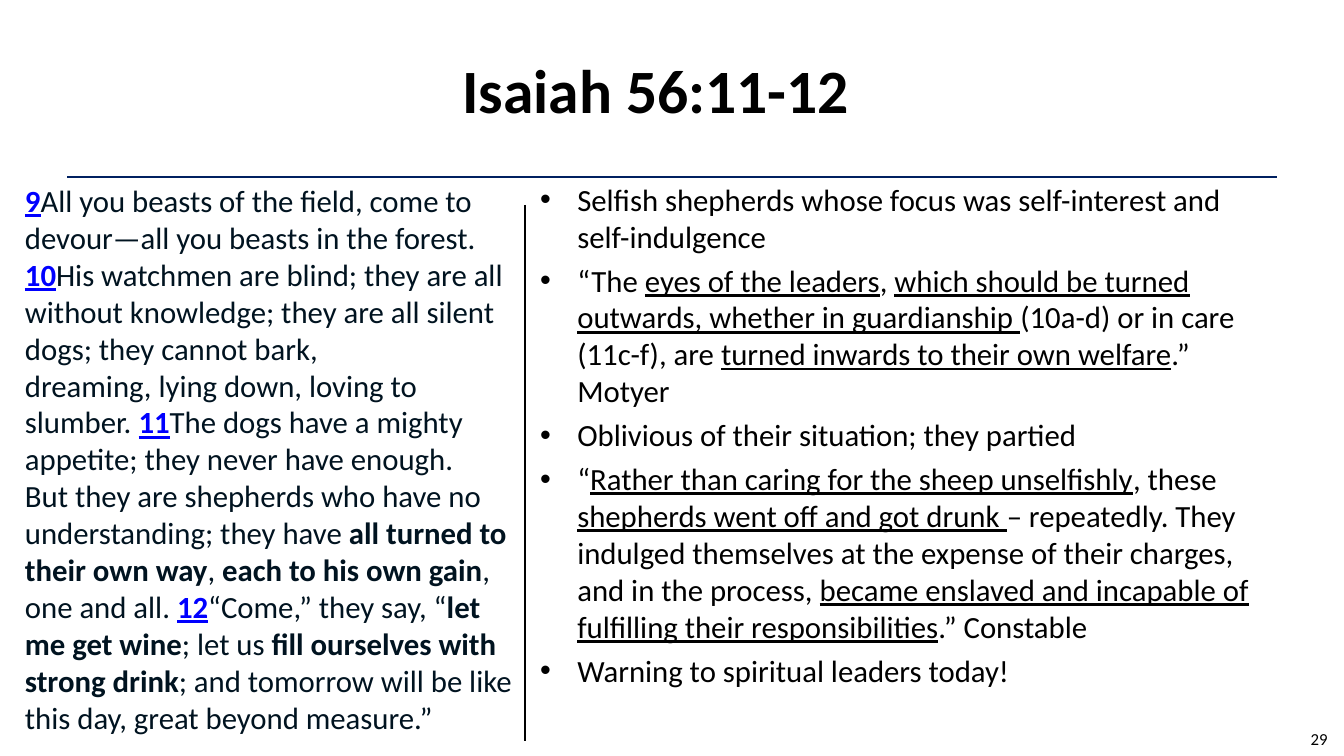
from dataclasses import dataclass

from lxml import etree
from pptx import Presentation
from pptx.dml.color import RGBColor
from pptx.enum import shapes, text
from pptx.oxml import ns
from pptx.util import Cm, Pt


@dataclass(frozen=True)
class Theme:
    font: str = "Calibri"
    black: RGBColor = RGBColor(0, 0, 0)
    scripture: RGBColor = RGBColor(0x00, 0x13, 0x20)
    verse_number: RGBColor = RGBColor(0, 0, 0xFF)
    rule: RGBColor = RGBColor(0x00, 0x20, 0x60)
    title_size: Pt = Pt(44)
    body_size: Pt = Pt(22)
    number_size: Pt = Pt(12)
    point_gap: Pt = Pt(5)
    indent: Cm = Cm(0.94)


THEME = Theme()
PLAIN, BOLD, UNDERLINE, VERSE = "plain", "bold", "underline", "verse"

PASSAGE = [
    ("9", VERSE),
    ("All you beasts of the field, come to devour—all you beasts in the forest.\n", PLAIN),
    ("10", VERSE),
    ("His watchmen are blind; they are all without knowledge; they are all silent dogs; "
     "they cannot bark,\ndreaming, lying down, loving to slumber. ", PLAIN),
    ("11", VERSE),
    ("The dogs have a mighty appetite; they never have enough.\n"
     "But they are shepherds who have no understanding; they have ", PLAIN),
    ("all turned to their own way", BOLD),
    (", ", PLAIN),
    ("each to his own gain", BOLD),
    (", one and all. ", PLAIN),
    ("12", VERSE),
    ("“Come,” they say, “", PLAIN),
    ("let me get wine", BOLD),
    ("; let us ", PLAIN),
    ("fill ourselves with strong drink", BOLD),
    ("; and tomorrow will be like this day, great beyond measure.”", PLAIN),
]

COMMENTARY = [
    [("Selfish shepherds whose focus was self-interest and self-indulgence", PLAIN)],
    [("“The ", PLAIN),
     ("eyes of the leaders", UNDERLINE),
     (", ", PLAIN),
     ("which should be turned outwards, whether in guardianship ", UNDERLINE),
     ("(10a-d) or in care (11c-f), are ", PLAIN),
     ("turned inwards to their own welfare", UNDERLINE),
     (".” Motyer", PLAIN)],
    [("Oblivious of their situation; they partied", PLAIN)],
    [("“", PLAIN),
     ("Rather than caring for the sheep unselfishly", UNDERLINE),
     (", these ", PLAIN),
     ("shepherds went off and got drunk ", UNDERLINE),
     ("– repeatedly. They indulged themselves at the expense of their charges, "
      "and in the process, ", PLAIN),
     ("became enslaved and incapable of fulfilling their responsibilities", UNDERLINE),
     (".” Constable", PLAIN)],
    [("Warning to spiritual leaders today!", PLAIN)],
]


def add_run(paragraph, words, size, color, style=PLAIN):
    """Add one styled run per line of words, with line breaks between them."""
    for index, line in enumerate(words.split("\n")):
        if index:
            paragraph.add_line_break()
        if not line:
            continue
        run = paragraph.add_run()
        run.text = line
        font = run.font
        font.name, font.size = THEME.font, size
        font.bold = style in (BOLD, VERSE)
        font.underline = style in (UNDERLINE, VERSE)
        font.color.rgb = THEME.verse_number if style == VERSE else color


def add_text_frame(slide, box, anchor=text.MSO_ANCHOR.TOP):
    frame = slide.shapes.add_textbox(*box).text_frame
    frame.word_wrap = True
    frame.vertical_anchor = anchor
    return frame


def add_rule(slide, start, end, color, width):
    rule = slide.shapes.add_connector(shapes.MSO_CONNECTOR.STRAIGHT, *start, *end)
    rule.line.color.rgb = color
    rule.line.width = width
    etree.SubElement(rule._element.spPr, ns.qn("a:effectLst"))


def add_bullet(paragraph):
    properties = paragraph._p.get_or_add_pPr()
    properties.set("marL", str(THEME.indent))
    properties.set("indent", str(-THEME.indent))
    etree.SubElement(properties, ns.qn("a:buFont"), typeface="Arial")
    etree.SubElement(properties, ns.qn("a:buChar"), char="•")


def add_heading(slide, box):
    """Place the title in the box, with a rule a little below it."""
    left, top, width, height = box
    title = slide.shapes.title
    title.left, title.top, title.width, title.height = box
    frame = title.text_frame
    frame.vertical_anchor = text.MSO_ANCHOR.MIDDLE
    paragraph = frame.paragraphs[0]
    paragraph.alignment = text.PP_ALIGN.CENTER
    add_run(paragraph, "Isaiah 56:11-12", THEME.title_size, THEME.black, BOLD)
    rule_left, rule_top = left + Cm(0.4), top + height + Cm(0.64)
    add_rule(slide, (rule_left, rule_top), (rule_left + width, rule_top), THEME.rule, Pt(0.75))


def add_passage(slide, box):
    """Place the Bible text in the box, with a divider along its right edge."""
    left, top, width, height = box
    paragraph = add_text_frame(slide, box).paragraphs[0]
    for words, style in PASSAGE:
        add_run(paragraph, words, THEME.body_size, THEME.scripture, style)
    divider = left + width - Cm(0.13)
    add_rule(slide, (divider, top + Cm(0.71)), (divider, top + height - Cm(0.23)),
             THEME.black, Pt(1.5))


def add_commentary(slide, box):
    frame = add_text_frame(slide, box)
    for index, point in enumerate(COMMENTARY):
        paragraph = frame.add_paragraph() if index else frame.paragraphs[0]
        add_bullet(paragraph)
        if index:
            paragraph.space_before = THEME.point_gap
        for words, style in point:
            add_run(paragraph, words, THEME.body_size, THEME.black, style)


def add_page_number(slide, box):
    paragraph = add_text_frame(slide, box, text.MSO_ANCHOR.MIDDLE).paragraphs[0]
    paragraph.alignment = text.PP_ALIGN.RIGHT
    add_run(paragraph, "29", THEME.number_size, THEME.black)


def main():
    deck = Presentation()
    deck.slide_width, deck.slide_height = Cm(33.87), Cm(19.05)
    slide = deck.slides.add_slide(deck.slide_layouts[5])
    add_heading(slide, (Cm(1.3), Cm(0.64), Cm(30.48), Cm(3.18)))
    add_passage(slide, (Cm(0.38), Cm(4.45), Cm(12.98), Cm(14.45)))
    add_commentary(slide, (Cm(13.36), Cm(4.42), Cm(19.02), Cm(14.45)))
    add_page_number(slide, (Cm(31.17), Cm(18.11), Cm(2.54), Cm(1.02)))
    deck.save("out.pptx")


if __name__ == "__main__":
    main()
